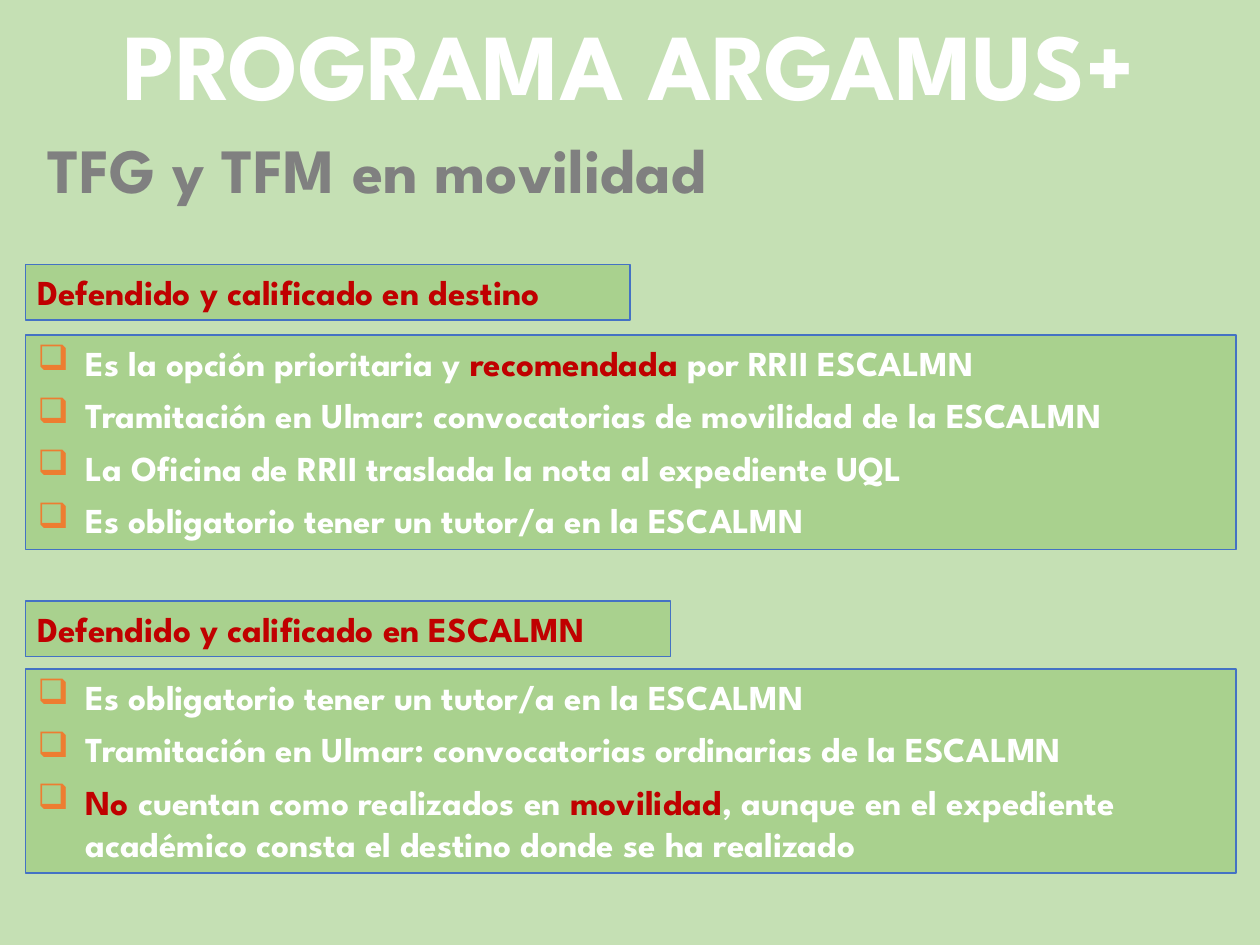
from lxml import etree
from pptx import Presentation
from pptx.dml.color import RGBColor
from pptx.enum.shapes import MSO_SHAPE
from pptx.enum.text import MSO_ANCHOR, MSO_AUTO_SIZE, PP_ALIGN
from pptx.oxml.ns import qn
from pptx.util import Inches, Pt

RECTANGLE = MSO_SHAPE.RECTANGLE
TOP = MSO_ANCHOR.TOP
GROW = MSO_AUTO_SIZE.SHAPE_TO_FIT_TEXT
LEFT, CENTER, JUSTIFY = PP_ALIGN.LEFT, PP_ALIGN.CENTER, PP_ALIGN.JUSTIFY

WHITE, RED, GRAY, ORANGE = "FFFFFF", "C00000", "808080", "ED7D31"
BACKGROUND, PANEL, BORDER = "C5E0B4", "A9D18E", "4472C4"
FRAME_FORMAT = {"word_wrap": True, "auto_size": GROW, "vertical_anchor": TOP}
INDENT = Inches(0.38)


def color(hex_value):
    return RGBColor.from_string(hex_value)


def write(shape, paragraphs, size, space_before=0, bullets=False):
    frame = shape.text_frame
    for name, value in FRAME_FORMAT.items():
        setattr(frame, name, value)
    for index, (alignment, runs) in enumerate(paragraphs):
        paragraph = frame.add_paragraph() if index else frame.paragraphs[0]
        paragraph.alignment = alignment
        paragraph.space_before = Pt(space_before)
        paragraph.line_spacing = 1.0
        if bullets:
            properties = paragraph._p.get_or_add_pPr()
            properties.set("marL", str(INDENT))
            properties.set("indent", str(-INDENT))
            bullet_color = etree.SubElement(properties, qn("a:buClr"))
            etree.SubElement(bullet_color, qn("a:srgbClr"), val=ORANGE)
            etree.SubElement(properties, qn("a:buChar"), char="❑")
        for text, text_color in runs:
            run = paragraph.add_run()
            run.text = text
            for name, value in {"name": "League Spartan", "size": Pt(size), "bold": True}.items():
                setattr(run.font, name, value)
            run.font.color.rgb = color(text_color)


presentation = Presentation()
presentation.slide_width, presentation.slide_height = Inches(10), Inches(7.5)
slide = presentation.slides.add_slide(presentation.slide_layouts[5])
slide.background.fill.solid()
slide.background.fill.fore_color.rgb = color(BACKGROUND)

title = slide.shapes.title
title_box = {"left": 0, "top": 0, "width": 10, "height": 1.01}
for name, value in title_box.items():
    setattr(title, name, Inches(value))
write(title, [(CENTER, [("PROGRAMA ARGAMUS+", WHITE)])], 54)

subtitle = slide.shapes.add_textbox(Inches(0.28), Inches(0.99), Inches(9.45), Inches(0.71))
write(subtitle, [(LEFT, [("TFG y TFM en movilidad", GRAY)])], 36)

tutor = (JUSTIFY, [("Es obligatorio tener un tutor/a en la ESCALMN", WHITE)])
destination_items = [
    (JUSTIFY, [
        ("Es la opción prioritaria y ", WHITE),
        ("recomendada", RED),
        (" por RRII ESCALMN", WHITE),
    ]),
    (JUSTIFY, [("Tramitación en Ulmar: convocatorias de movilidad de la ESCALMN", WHITE)]),
    (JUSTIFY, [("La Oficina de RRII traslada la nota al expediente UQL", WHITE)]),
    tutor,
]
home_items = [
    tutor,
    (JUSTIFY, [("Tramitación en Ulmar: convocatorias ordinarias de la ESCALMN", WHITE)]),
    (LEFT, [
        ("No", RED),
        (" cuentan como realizados en ", WHITE),
        ("movilidad", RED),
        (", aunque en el expediente académico consta el destino donde se ha realizado", WHITE),
    ]),
]
destination_heading = [(LEFT, [("Defendido y calificado en destino", RED)])]
home_heading = [(LEFT, [("Defendido y calificado en ESCALMN", RED)])]

panels = [
    (2.1, 4.8, 0.44, destination_heading, False),
    (2.66, 9.61, 1.7, destination_items, True),
    (4.77, 5.12, 0.44, home_heading, False),
    (5.31, 9.61, 1.62, home_items, True),
]
for top, width, height, paragraphs, bullets in panels:
    panel = slide.shapes.add_shape(
        RECTANGLE, Inches(0.2), Inches(top), Inches(width), Inches(height)
    )
    panel.shadow.inherit = False
    panel.fill.solid()
    panel.fill.fore_color.rgb = color(PANEL)
    panel.line.color.rgb = color(BORDER)
    panel.line.width = Pt(0.75)
    write(panel, paragraphs, 20, space_before=6, bullets=bullets)

presentation.save("out.pptx")
